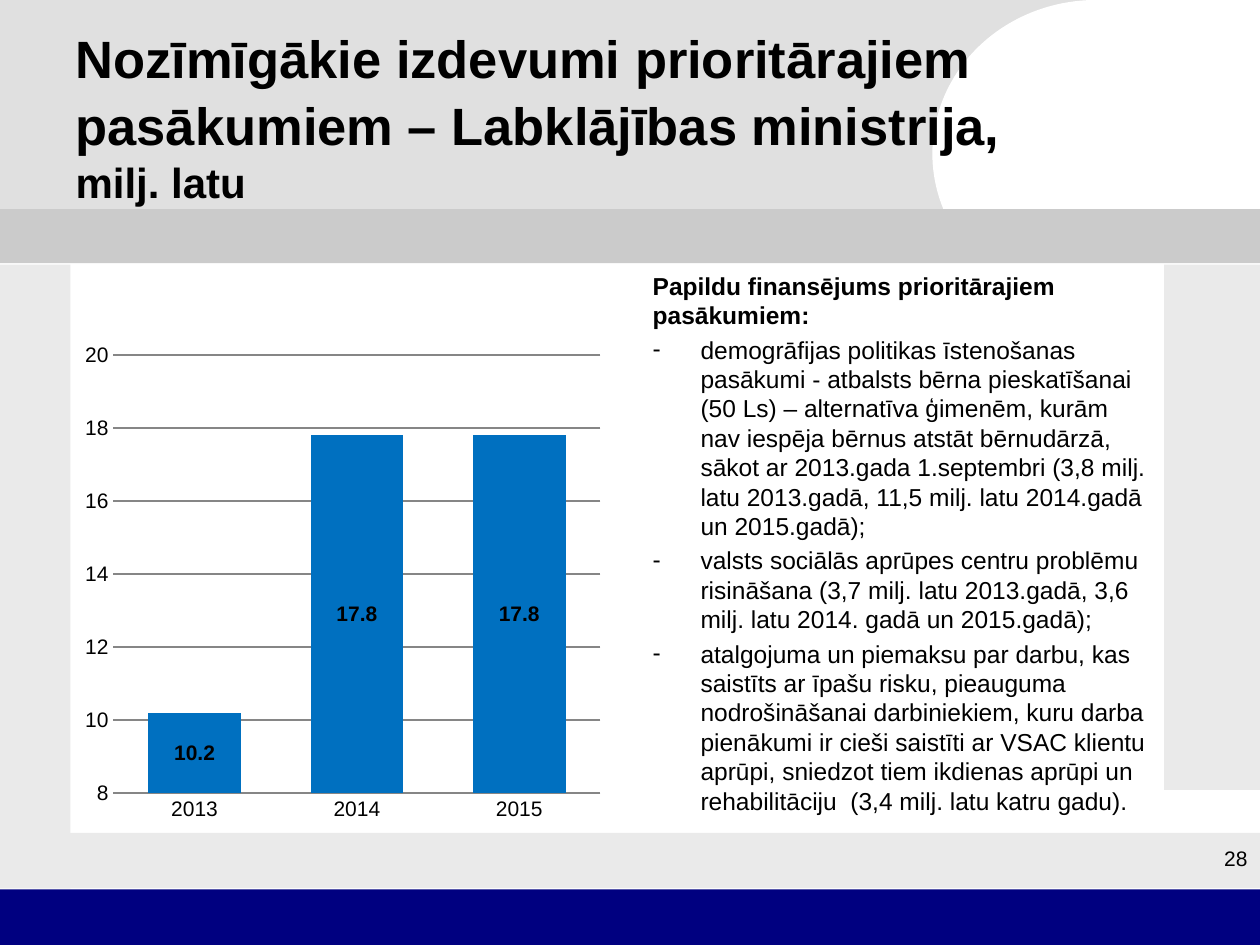
from lxml import etree
from pptx import Presentation
from pptx.chart.data import CategoryChartData
from pptx.dml.color import RGBColor
from pptx.enum import chart as ch, shapes, text
from pptx.oxml.ns import qn
from pptx.util import Inches, Pt

BLACK = RGBColor(0, 0, 0)
WHITE = RGBColor(255, 255, 255)
PALE = RGBColor(0xEA, 0xEA, 0xEA)
HEADER = RGBColor(0xE0, 0xE0, 0xE0)
BAND = RGBColor(0xCB, 0xCB, 0xCB)
NAVY = RGBColor(0, 0, 0x80)
BLUE = RGBColor(0, 0x70, 0xC0)
GRID = RGBColor(0x86, 0x86, 0x86)
FONT = "Arial"

RECTANGLE = shapes.MSO_SHAPE.RECTANGLE
BACKDROP = [  # preset, (left, top, width, height), fill
    (RECTANGLE, (0, 0, 9.09, 1.69), HEADER),
    (shapes.MSO_SHAPE.OVAL, (7.4, 0, 2.6, 2.44), WHITE),
    (RECTANGLE, (0, 2.1, 0.56, 4.95), PALE),
    (RECTANGLE, (0.26, 6.61, 9.74, 0.44), PALE),
    (RECTANGLE, (0, 7.06, 10, 0.44), NAVY),
    (RECTANGLE, (9.24, 2.1, 0.76, 4.17), PALE),
    (RECTANGLE, (8.62, 0, 1.38, 2.02), WHITE),
    (RECTANGLE, (0, 1.66, 10, 0.43), BAND),
]
TITLE_RUNS = [
    ("Nozīmīgākie izdevumi prioritārajiem pasākumiem – Labklājības ministrija,", 30),
    (" \v", 32),
    ("milj. latu", 24),
]
YEARS = ["2013", "2014", "2015"]
SPENDING = [10.2, 17.8, 17.8]
HEADING = "Papildu finansējums prioritārajiem pasākumiem:"
MEASURES = [
    "demogrāfijas politikas īstenošanas pasākumi - atbalsts bērna pieskatīšanai "
    "(50 Ls) – alternatīva ģimenēm, kurām nav iespēja bērnus atstāt bērnudārzā, "
    "sākot ar 2013.gada 1.septembri (3,8 milj. latu 2013.gadā, 11,5 milj. latu "
    "2014.gadā un 2015.gadā);",
    "valsts sociālās aprūpes centru problēmu risināšana (3,7 milj. latu 2013.gadā, "
    "3,6 milj. latu 2014. gadā un 2015.gadā);",
    "atalgojuma un piemaksu par darbu, kas saistīts ar īpašu risku, pieauguma "
    "nodrošināšanai darbiniekiem, kuru darba pienākumi ir cieši saistīti ar VSAC "
    "klientu aprūpi, sniedzot tiem ikdienas aprūpi un rehabilitāciju  (3,4 milj. "
    "latu katru gadu).",
]


def place(shape, left, top, width, height):
    shape.left, shape.top = Inches(left), Inches(top)
    shape.width, shape.height = Inches(width), Inches(height)


def style(font, size, bold=False):
    font.name, font.size, font.bold = FONT, Pt(size), bold
    font.color.rgb = BLACK


def set_bullet(paragraph, character=None, indent=0.0):
    """Give the paragraph a hanging bullet, or none without a character."""
    properties = paragraph._p.get_or_add_pPr()
    properties.set("marL", str(Inches(indent)))
    properties.set("indent", str(-Inches(indent)))
    if character:
        etree.SubElement(properties, qn("a:buChar")).set("char", character)
    else:
        etree.SubElement(properties, qn("a:buNone"))


def add_backdrop(slide):
    for index, (preset, box, fill) in enumerate(BACKDROP):
        shape = slide.shapes.add_shape(preset, *map(Inches, box))
        shape.shadow.inherit = False
        shape.fill.solid()
        shape.fill.fore_color.rgb = fill
        shape.line.fill.background()
        # Behind the placeholders, after the two group property elements
        slide.shapes._spTree.insert(2 + index, shape._element)


def fill_title(title):
    place(title, 0.5, 0.3, 9, 1.25)
    frame = title.text_frame
    frame.auto_size = text.MSO_AUTO_SIZE.NONE
    frame.vertical_anchor = text.MSO_ANCHOR.MIDDLE
    paragraph = frame.paragraphs[0]
    paragraph.alignment = text.PP_ALIGN.LEFT
    for words, size in TITLE_RUNS:
        run = paragraph.add_run()
        run.text = words.rstrip("\v")
        style(run.font, size, True)
        if words.endswith("\v"):
            paragraph.add_line_break()


def fill_body(body):
    place(body, 5.08, 2.1, 4.17, 4.57)
    frame = body.text_frame
    frame.auto_size = text.MSO_AUTO_SIZE.NONE
    heading = frame.paragraphs[0]
    heading.text = HEADING
    set_bullet(heading)
    heading.space_before = Pt(0)
    style(heading.font, 14, True)
    for measure in MEASURES:
        paragraph = frame.add_paragraph()
        paragraph.text = measure
        set_bullet(paragraph, "-", 0.38)
        style(paragraph.font, 14)


def add_spending_chart(slide):
    data = CategoryChartData()
    data.categories = YEARS
    data.add_series("Series 1", SPENDING)
    chart = slide.shapes.add_chart(
        ch.XL_CHART_TYPE.COLUMN_CLUSTERED,
        *map(Inches, (0.59, 2.65, 4.26, 3.94)), data).chart
    chart.has_legend = chart.has_title = False
    style(chart.font, 18)

    for axis in (chart.category_axis, chart.value_axis):
        axis.major_tick_mark = axis.minor_tick_mark = ch.XL_TICK_MARK.NONE
        style(axis.tick_labels.font, 12)
    chart.category_axis.format.line.color.rgb = GRID
    values = chart.value_axis
    values.minimum_scale, values.maximum_scale, values.major_unit = 8, 20, 2
    values.format.line.fill.background()
    values.major_gridlines.format.line.color.rgb = GRID
    values.tick_labels.number_format = "0"
    values.tick_labels.number_format_is_linked = False

    plot = chart.plots[0]
    plot.gap_width, plot.overlap, plot.vary_by_categories = 75, -25, False
    series = plot.series[0]
    series.format.fill.solid()
    series.format.fill.fore_color.rgb = BLUE
    labels = series.data_labels
    labels.show_value = True
    labels.position = ch.XL_LABEL_POSITION.CENTER
    labels.number_format = "0.0"
    labels.number_format_is_linked = False
    style(labels.font, 12, True)


def add_page_number(slide):
    box = slide.shapes.add_textbox(*map(Inches, (7.74, 6.66, 2.26, 0.5)))
    box.text_frame.word_wrap = True
    paragraph = box.text_frame.paragraphs[0]
    paragraph.text = "28"
    paragraph.alignment = text.PP_ALIGN.RIGHT
    style(paragraph.font, 12)


def main():
    presentation = Presentation()
    presentation.slide_width, presentation.slide_height = Inches(10), Inches(7.5)
    slide = presentation.slides.add_slide(presentation.slide_layouts[1])
    add_backdrop(slide)
    fill_title(slide.shapes.title)
    fill_body(slide.placeholders[1])
    add_spending_chart(slide)
    add_page_number(slide)
    presentation.save("out.pptx")


if __name__ == "__main__":
    main()
